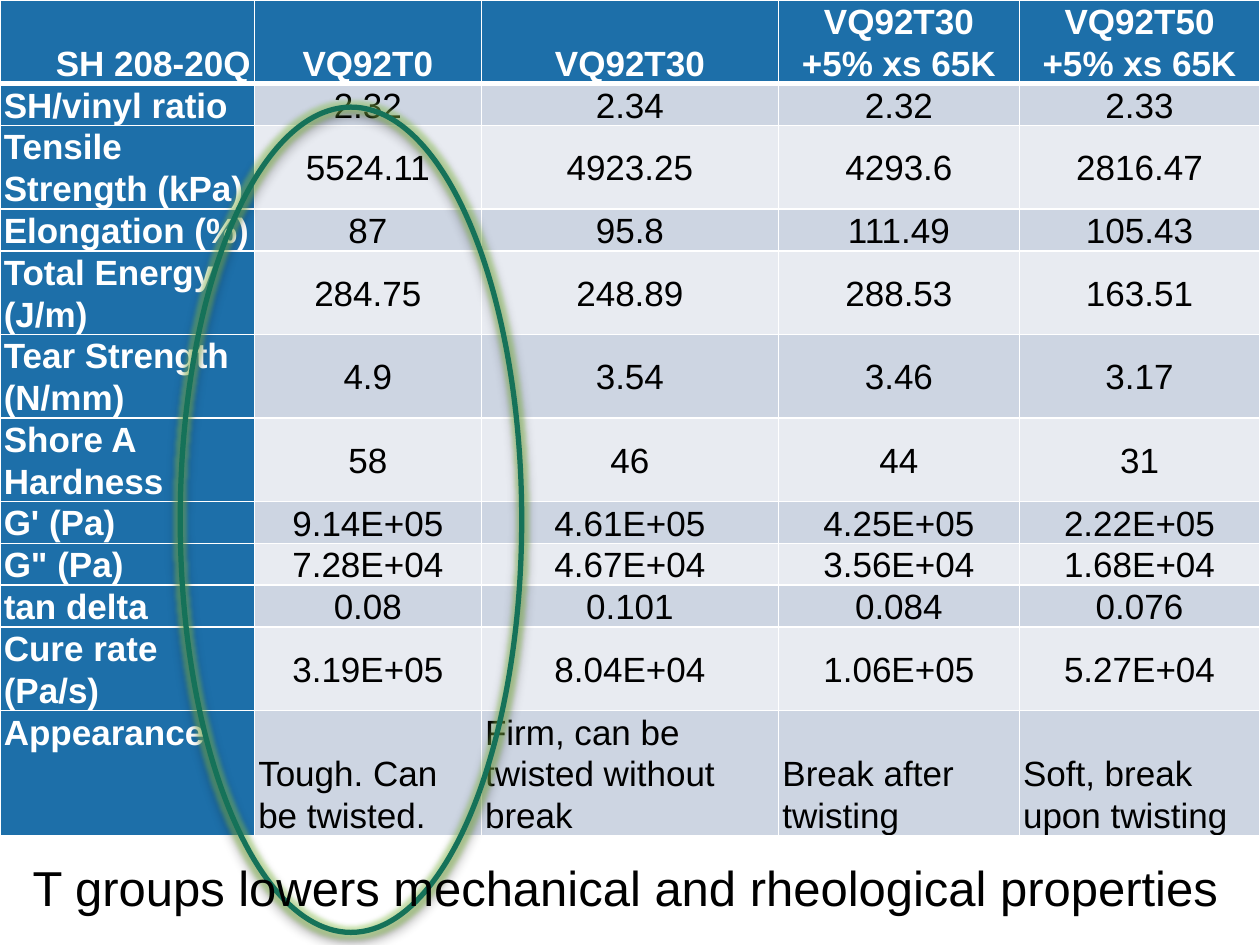
from lxml.etree import SubElement
from pptx import Presentation
from pptx.dml.color import RGBColor
from pptx.enum.shapes import MSO_SHAPE as Shape
from pptx.enum.text import MSO_ANCHOR as Anchor, MSO_AUTO_SIZE as AutoSize, PP_ALIGN as Align
from pptx.oxml import parse_xml
from pptx.oxml.ns import nsdecls, qn
from pptx.util import Inches, Pt

WHITE = RGBColor(0xFF, 0xFF, 0xFF)
BLACK = RGBColor(0x00, 0x00, 0x00)
BLUE = RGBColor(0x1D, 0x6F, 0xA9)
BAND_DARK = RGBColor(0xCD, 0xD5, 0xE2)
BAND_LIGHT = RGBColor(0xE8, 0xEB, 0xF1)
GREEN = RGBColor(0x15, 0x72, 0x59)
GLOW = RGBColor(0x92, 0xD0, 0x50)

COLUMN_WIDTHS = [2.02, 1.8, 2.36, 1.91, 1.91]
LINE_HEIGHT = 0.33
SAMPLES = ["SH 208-20Q", "VQ92T0", "VQ92T30", "VQ92T30\n+5% xs 65K", "VQ92T50\n+5% xs 65K"]
# Each property: number of text lines, label, one value per sample
PROPERTIES = [
    (1, "SH/vinyl ratio", "2.32", "2.34", "2.32", "2.33"),
    (2, "Tensile Strength (kPa)", "5524.11", "4923.25", "4293.6", "2816.47"),
    (1, "Elongation (%)", "87", "95.8", "111.49", "105.43"),
    (2, "Total Energy (J/m)", "284.75", "248.89", "288.53", "163.51"),
    (2, "Tear Strength (N/mm)", "4.9", "3.54", "3.46", "3.17"),
    (2, "Shore A Hardness", "58", "46", "44", "31"),
    (1, "G' (Pa)", "9.14E+05", "4.61E+05", "4.25E+05", "2.22E+05"),
    (1, 'G" (Pa)', "7.28E+04", "4.67E+04", "3.56E+04", "1.68E+04"),
    (1, "tan delta", "0.08", "0.101", "0.084", "0.076"),
    (2, "Cure rate (Pa/s)", "3.19E+05", "8.04E+04", "1.06E+05", "5.27E+04"),
    (3, "Appearance", "Tough. Can be twisted.", "Firm, can be twisted without break",
     "Break after twisting", "Soft, break upon twisting"),
]


class SlideBuilder:
    font = "Arial"

    def __init__(self, slide):
        self.slide = slide

    def add_run(self, paragraph, text, size, color, bold=False):
        run = paragraph.add_run()
        run.text = text
        run.font.name = self.font
        run.font.size = Pt(size)
        run.font.bold = bold
        run.font.color.rgb = color

    def borders(self, cell, bottom):
        properties = cell._tc.get_or_add_tcPr()
        for index, (side, width) in enumerate([("L", 1), ("R", 1), ("T", 1), ("B", bottom)]):
            line = SubElement(properties, qn(f"a:ln{side}"), w=str(Pt(width)))
            fill = SubElement(line, qn("a:solidFill"))
            SubElement(fill, qn("a:srgbClr"), val=str(WHITE))
            properties.insert(index, line)

    def cell(self, cell, text, fill, color, bold, align, anchor, bottom=1):
        cell.fill.solid()
        cell.fill.fore_color.rgb = fill
        cell.margin_left = cell.margin_right = Inches(0.03)
        cell.margin_top = cell.margin_bottom = 0
        cell.vertical_anchor = anchor
        frame = cell.text_frame
        for index, line in enumerate(text.split("\n")):
            paragraph = frame.add_paragraph() if index else frame.paragraphs[0]
            paragraph.alignment = align
            paragraph.line_spacing = 1.07
            self.add_run(paragraph, line, 20, color, bold)
        self.borders(cell, bottom)

    def table(self, header, properties, widths):
        line_counts = [2] + [entry[0] for entry in properties]
        height = sum(line_counts) * LINE_HEIGHT
        table = self.slide.shapes.add_table(
            len(line_counts), len(widths), 0, 0, Inches(sum(widths)), Inches(height)).table
        table.first_row = table.horz_banding = False
        for column, width in zip(table.columns, widths):
            column.width = Inches(width)
        for row, lines in zip(table.rows, line_counts):
            row.height = Inches(lines * LINE_HEIGHT)

        for column, name in enumerate(header):
            align = Align.CENTER if column else Align.RIGHT
            self.cell(table.cell(0, column), name, BLUE, WHITE, True, align, Anchor.BOTTOM, 3)

        for row, (_, label, *values) in enumerate(properties, 1):
            self.cell(table.cell(row, 0), label, BLUE, WHITE, True, Align.LEFT, Anchor.TOP)
            band = BAND_DARK if row % 2 else BAND_LIGHT
            is_description = label == "Appearance"
            align = Align.LEFT if is_description else Align.CENTER
            anchor = Anchor.BOTTOM if is_description else Anchor.MIDDLE
            for column, value in enumerate(values, 1):
                self.cell(table.cell(row, column), value, band, BLACK, False, align, anchor)

    def highlight(self, left, top, width, height, rotation):
        ring = self.slide.shapes.add_shape(
            Shape.OVAL, Inches(left), Inches(top), Inches(width), Inches(height))
        ring.rotation = rotation
        ring.fill.background()
        ring.line.color.rgb = GREEN
        ring.line.width = Pt(3)
        ring._element.spPr.append(parse_xml(
            f'<a:effectLst {nsdecls("a")}>'
            f'<a:glow rad="{Pt(5)}"><a:srgbClr val="{GLOW}"><a:alpha val="40000"/></a:srgbClr></a:glow>'
            f'<a:outerShdw blurRad="{Pt(4)}" dist="{Pt(3)}" dir="5400000" rotWithShape="0">'
            f'<a:srgbClr val="{BLACK}"><a:alpha val="40000"/></a:srgbClr></a:outerShdw>'
            '</a:effectLst>'))

    def text(self, text, left, top, width, height, size):
        box = self.slide.shapes.add_textbox(
            Inches(left), Inches(top), Inches(width), Inches(height))
        frame = box.text_frame
        frame.word_wrap = True
        frame.auto_size = AutoSize.SHAPE_TO_FIT_TEXT
        self.add_run(frame.paragraphs[0], text, size, BLACK)


def main():
    deck = Presentation()
    deck.slide_width, deck.slide_height = Inches(10), Inches(7.5)
    builder = SlideBuilder(deck.slides.add_slide(deck.slide_layouts[6]))

    # Measured properties of each sample
    builder.table(SAMPLES, PROPERTIES, COLUMN_WIDTHS)

    # Ring around the sample without T groups
    builder.highlight(-0.49, 2.77, 6.55, 2.71, 90)

    # Conclusion
    builder.text("T groups lowers mechanical and rheological properties",
                 0.16, 6.76, 10.12, 0.57, 28)

    deck.save("out.pptx")


if __name__ == "__main__":
    main()
